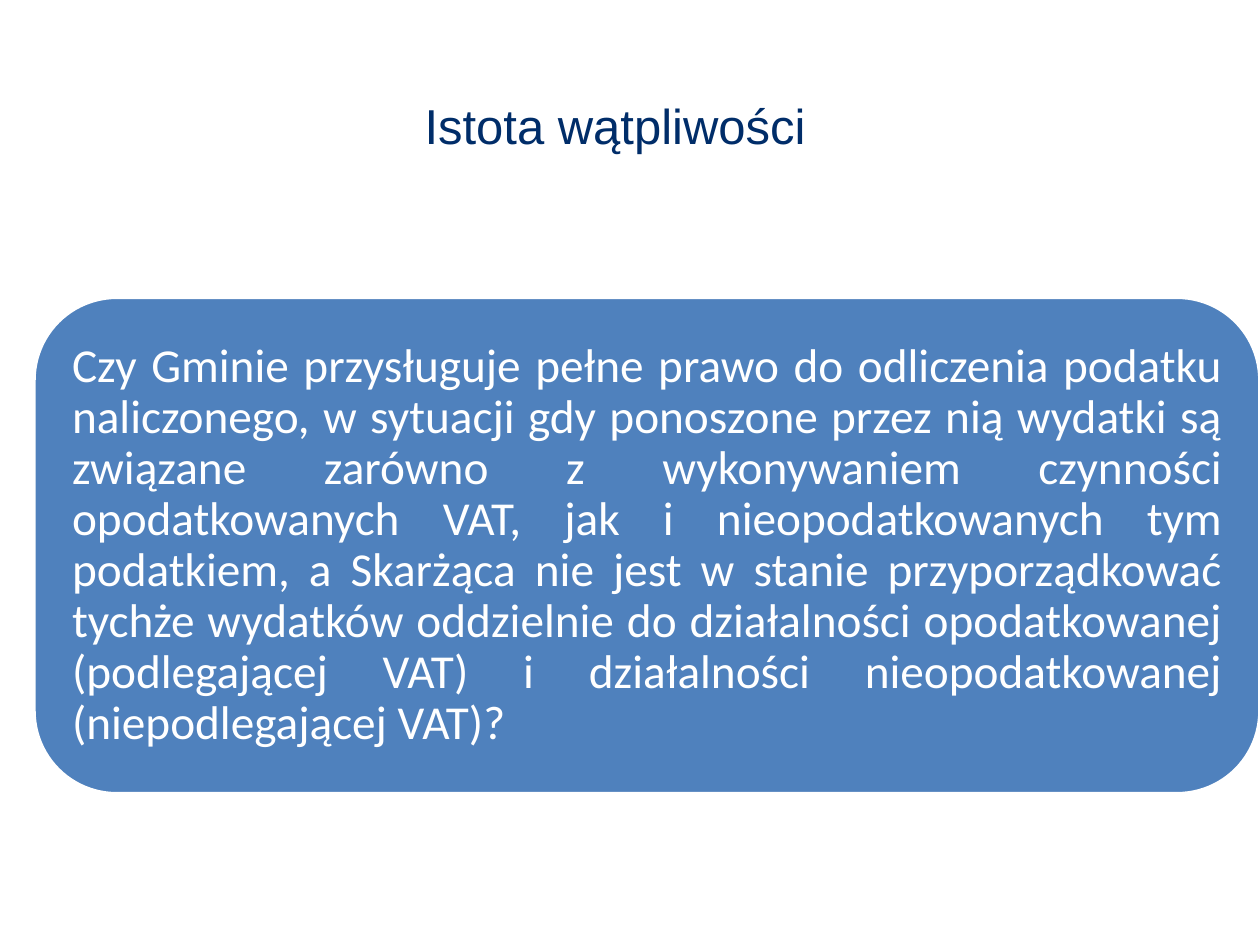
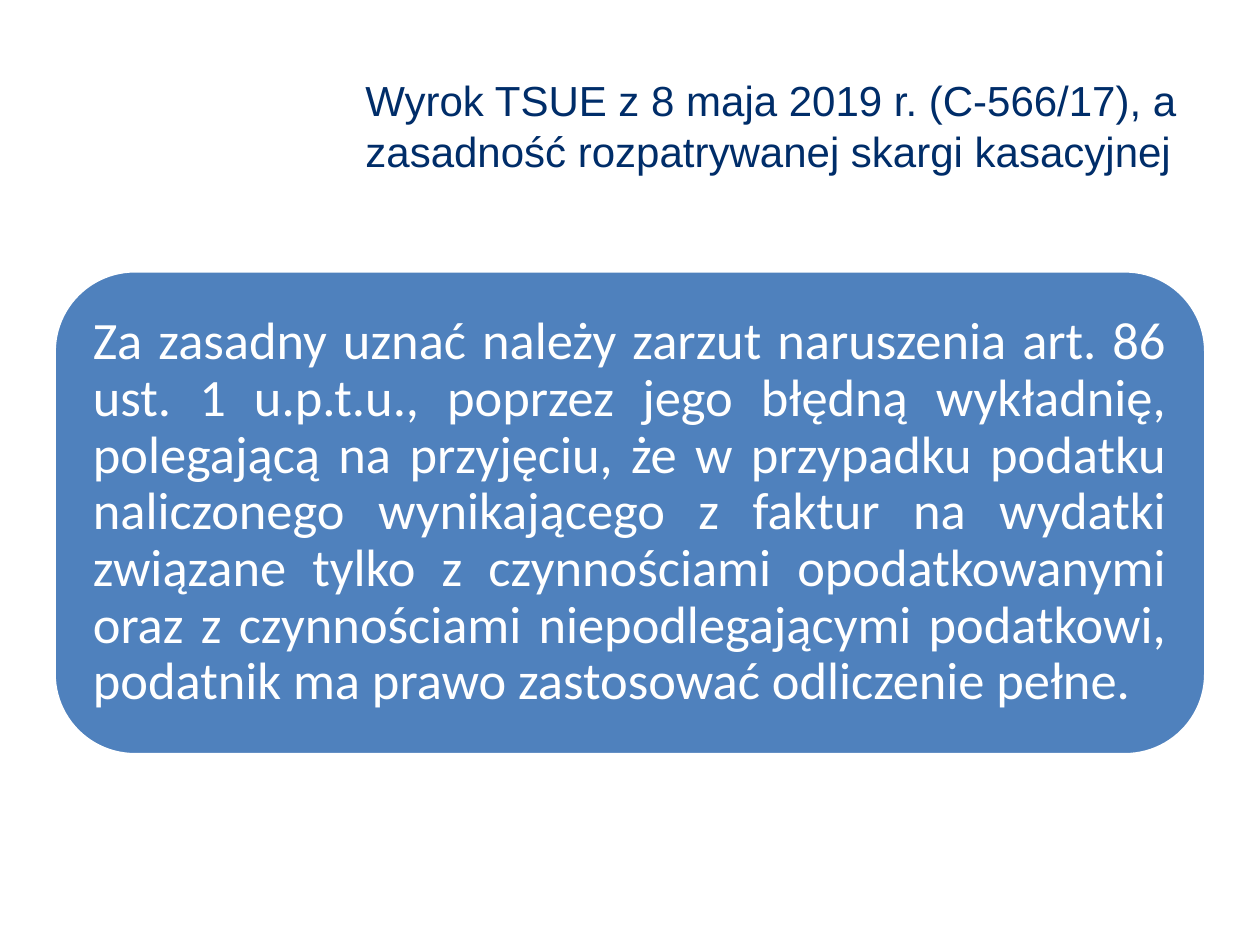
import pptx
import pptx.util
import pptx.dml.color
import pptx.enum.shapes
import pptx.enum.text

# Shared look
NAVY, BLUE, WHITE = "002D69", "4F81BD", "FFFFFF"
TITLE_FONT, BODY_FONT = "Arial", "Calibri"

prs = pptx.Presentation()
prs.slide_width = pptx.util.Inches(10)
prs.slide_height = pptx.util.Inches(7.5)

# Grid of 100 columns by 75 rows
COL = prs.slide_width // 100
ROW = prs.slide_height // 75
TITLE_TOP, TITLE_RIGHT, TITLE_ROWS = 4.4, 95, 11.1


def rgb(value):
    return pptx.dml.color.RGBColor.from_string(value)


def write(sp, text, font, size, color, align, inset_x, inset_y):
    tf = sp.text_frame
    tf.text = text
    tf.word_wrap = True
    tf.auto_size = pptx.enum.text.MSO_AUTO_SIZE.NONE
    tf.vertical_anchor = pptx.enum.text.MSO_ANCHOR.MIDDLE
    tf.margin_left = tf.margin_right = pptx.util.Inches(inset_x)
    tf.margin_top = tf.margin_bottom = pptx.util.Inches(inset_y)
    p = tf.paragraphs[0]
    p.alignment = align
    r = p.runs[0]
    r.font.name = font
    r.font.size = pptx.util.Pt(size)
    r.font.color.rgb = rgb(color)
    return p


# Title, its size and left column; panel text, its size, inset and grid box
slides = [
    ("Istota wątpliwości", 28, 32.7,
     "Czy Gminie przysługuje pełne prawo do odliczenia podatku naliczonego, "
     "w sytuacji gdy ponoszone przez nią wydatki są związane zarówno z "
     "wykonywaniem czynności opodatkowanych VAT, jak i nieopodatkowanych tym "
     "podatkiem, a Skarżąca nie jest w stanie przyporządkować tychże wydatków "
     "oddzielnie do działalności opodatkowanej (podlegającej VAT) i "
     "działalności nieopodatkowanej (niepodlegającej VAT)?",
     27, 0.11, (2.7, 23.6, 97.3, 39.4)),
    ("Wyrok TSUE z 8 maja 2019 r. (C-566/17), a zasadność rozpatrywanej "
     "skargi kasacyjnej", 24, 28,
     "Za zasadny uznać należy zarzut naruszenia art. 86 ust. 1 u.p.t.u., "
     "poprzez jego błędną wykładnię, polegającą na przyjęciu, że w przypadku "
     "podatku naliczonego wynikającego z faktur na wydatki związane tylko z "
     "czynnościami opodatkowanymi oraz z czynnościami niepodlegającymi "
     "podatkowi, podatnik ma prawo zastosować odliczenie pełne.",
     30, 0.12, (4.3, 21.5, 91.4, 38.4)),
]

for title, title_size, title_left, text, size, inset, box in slides:
    s = prs.slides.add_slide(prs.slide_layouts[5])

    # Rounded panel with justified text
    left, top, width, height = box
    sp = s.shapes.add_shape(
        pptx.enum.shapes.MSO_SHAPE.ROUNDED_RECTANGLE,
        int(left * COL), int(top * ROW), int(width * COL), int(height * ROW))
    sp.shadow.inherit = False
    sp.fill.solid()
    sp.fill.fore_color.rgb = rgb(BLUE)
    sp.line.color.rgb = rgb(WHITE)
    sp.line.width = pptx.util.Pt(2)
    p = write(sp, text, BODY_FONT, size, WHITE,
              pptx.enum.text.PP_ALIGN.JUSTIFY, inset, inset)
    p.line_spacing = 0.9

    # Title, flush with the right margin
    sp = s.shapes.title
    sp.left, sp.top = int(title_left * COL), int(TITLE_TOP * ROW)
    sp.width = int((TITLE_RIGHT - title_left) * COL)
    sp.height = int(TITLE_ROWS * ROW)
    write(sp, title, TITLE_FONT, title_size, NAVY,
          pptx.enum.text.PP_ALIGN.LEFT, 0.1, 0.05)

prs.save("out.pptx")
